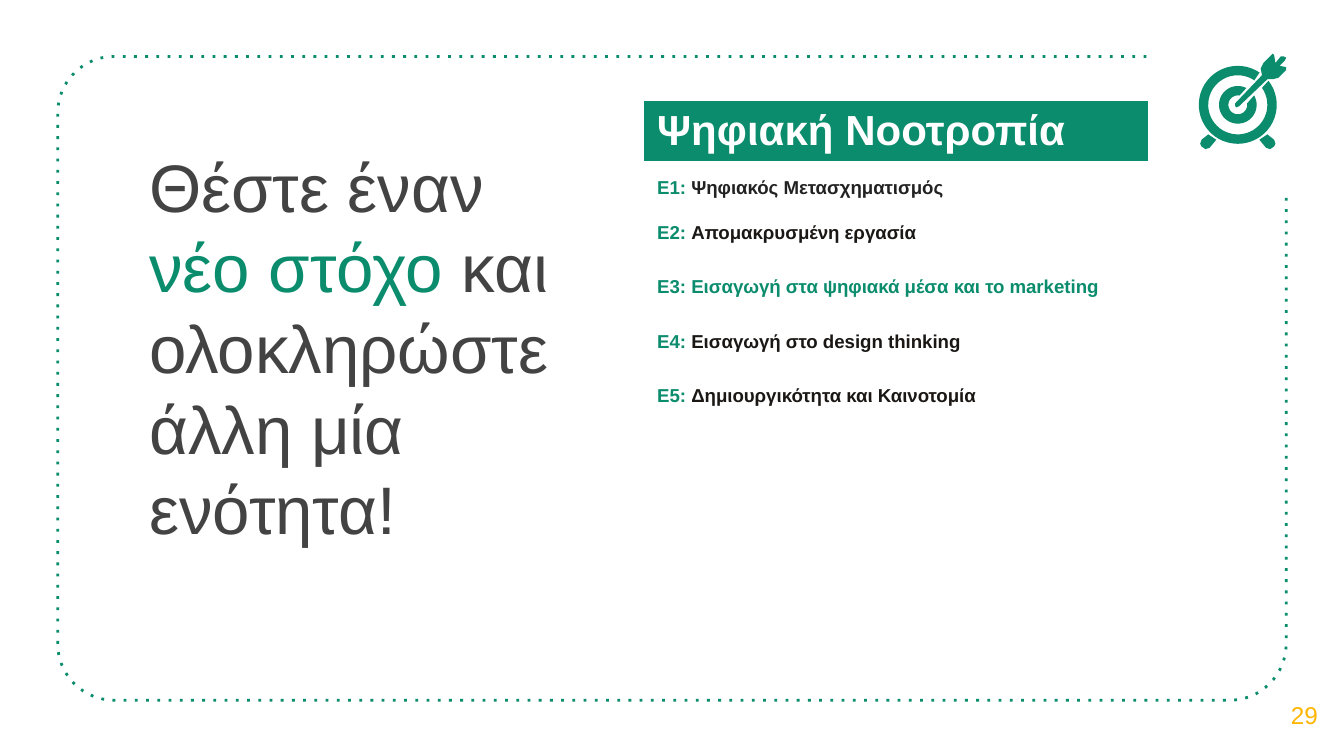
"""Build the goal-setting slide with its list of units and a target icon."""
import math

from pptx import Presentation
from pptx import util as u
from pptx.dml.color import RGBColor
from pptx.enum import dml, text
from pptx.oxml import ns

GREEN = RGBColor(0x0A, 0x8C, 0x6D)
GRAY = RGBColor(0x43, 0x43, 0x43)
INK = RGBColor(0x1A, 0x17, 0x14)
CHARCOAL = RGBColor(0x22, 0x22, 0x22)
AMBER = RGBColor(0xFF, 0xB6, 0x00)
WHITE = RGBColor(0xFF, 0xFF, 0xFF)
PLAIN_TABLE = "{2D5ABB26-0587-4C30-8999-92F81FD0307C}"

TITLE = [("Θέστε έναν ", GRAY), ("νέο στόχο ", GREEN),
         ("και ολοκληρώστε άλλη μία ενότητα!", GRAY)]
HEADING = "Ψηφιακή Νοοτροπία"
UNITS = [
    ("Ε1: ", "Ψηφιακός Μετασχηματισμός", CHARCOAL),
    ("Ε2: ", "Απομακρυσμένη εργασία", INK),
    ("Ε3: ", "Εισαγωγή στα ψηφιακά μέσα και το marketing", GREEN),
    ("Ε4: ", "Εισαγωγή στο design thinking", INK),
    ("Ε5: ", "Δημιουργικότητα και Καινοτομία", INK),
]
PAGE_NUMBER = "29"

LEFT, TOP, RIGHT, BOTTOM, RADIUS = 0.43, 0.42, 9.57, 5.21, 0.42
TARGET = (9.21, 0.78)
RINGS = [
    {"outer": (0.29, 56, 398), "inner": (0.22, 395, 56)},
    {"outer": (0.14, 63, 390), "inner": (0.07, 369, 80)},
]
FOOT = [(8.99, 1), (8.94, 1.04), (8.93, 1.07), (8.94, 1.09), (8.97, 1.11),
        (9, 1.1), (9.05, 1.04), (9.02, 1.02)]
ARROW = [(9.47, 0.4), (9.46, 0.41), (9.4, 0.47), (9.38, 0.51), (9.39, 0.56),
         (9.19, 0.77), (9.19, 0.79), (9.2, 0.8), (9.22, 0.79), (9.43, 0.59),
         (9.47, 0.59), (9.51, 0.58), (9.57, 0.52), (9.57, 0.5), (9.52, 0.49),
         (9.56, 0.45), (9.57, 0.43), (9.55, 0.42), (9.53, 0.42), (9.49, 0.47),
         (9.48, 0.41)]


def arc(center, radius, start, end, steps=48):
    angles = [math.radians(start + (end - start) * i / steps) for i in range(steps + 1)]
    return [(center[0] + radius * math.cos(a), center[1] - radius * math.sin(a))
            for a in angles]


def add_outline(parent, points, close=True):
    corners = [(u.Inches(x), u.Inches(y)) for x, y in points]
    builder = parent.build_freeform(*corners[0])
    builder.add_line_segments(corners[1:], close=close)
    shape = builder.convert_to_shape()
    shape.shadow.inherit = False
    return shape


def add_span(para, words, size, color, bold=False):
    span = para.add_run()
    span.text = words
    span.font.name = "Arial"
    span.font.size = u.Pt(size)
    span.font.bold = bold
    span.font.color.rgb = color


def place(box, left, top, width, height, anchor):
    box.left, box.top = u.Inches(left), u.Inches(top)
    box.width, box.height = u.Inches(width), u.Inches(height)
    frame = box.text_frame
    frame.word_wrap = True
    frame.auto_size = text.MSO_AUTO_SIZE.NONE
    frame.vertical_anchor = anchor
    frame.margin_left = frame.margin_right = u.Inches(0.1)
    frame.margin_top = frame.margin_bottom = u.Inches(0.1)
    return frame.paragraphs[0]


def add_border(page):
    points = [(8.53, TOP)]
    points += arc((LEFT + RADIUS, TOP + RADIUS), RADIUS, 90, 180, 16)
    points += arc((LEFT + RADIUS, BOTTOM - RADIUS), RADIUS, 180, 270, 16)
    points += arc((RIGHT - RADIUS, BOTTOM - RADIUS), RADIUS, 270, 360, 16)
    points.append((RIGHT, 1.46))
    border = add_outline(page.shapes, points, close=False)
    border.fill.background()
    border.line.color.rgb = GREEN
    border.line.width = u.Pt(1.5)
    border.line.dash_style = dml.MSO_LINE.ROUND_DOT
    border.element.spPr.find(".//" + ns.qn("a:prstDash")).set("val", "dot")


def add_target(page):
    icon = page.shapes.add_group_shape()
    outlines = [arc(TARGET, *ring["outer"]) + arc(TARGET, *ring["inner"]) for ring in RINGS]
    mirrored_foot = [(2 * TARGET[0] - x, y) for x, y in FOOT]
    for points in outlines + [FOOT, mirrored_foot, ARROW]:
        part = add_outline(icon.shapes, points)
        part.fill.solid()
        part.fill.fore_color.rgb = GREEN
        part.line.fill.background()


def add_units(page):
    holder = page.shapes.add_table(len(UNITS) + 1, 1, u.Inches(4.79), u.Inches(0.75),
                                   u.Inches(3.75), u.Inches(2.43))
    table = holder.table
    table.first_row = table.horz_banding = False
    holder.element.find(".//" + ns.qn("a:tableStyleId")).text = PLAIN_TABLE
    heading = table.cell(0, 0)
    heading.fill.solid()
    heading.fill.fore_color.rgb = GREEN
    add_span(heading.text_frame.paragraphs[0], HEADING, 22.5, WHITE, True)
    for row, (label, name, color) in enumerate(UNITS, 1):
        cell = table.cell(row, 0)
        cell.fill.background()
        para = cell.text_frame.paragraphs[0]
        add_span(para, label, 10, GREEN, True)
        add_span(para, name, 10, color, True)
    table.cell(1, 0).vertical_anchor = text.MSO_ANCHOR.MIDDLE


def main():
    deck = Presentation()
    deck.slide_width = u.Inches(10)
    deck.slide_height = deck.slide_width * 9 // 16
    page = deck.slides.add_slide(deck.slide_layouts[5])
    add_border(page)

    para = place(page.shapes.title, 1.01, 0.98, 3.2, 0.94, text.MSO_ANCHOR.TOP)
    para.alignment = text.PP_ALIGN.LEFT
    para.line_spacing = 1.0
    for words, color in TITLE:
        add_span(para, words, 36, color)

    number = page.shapes.add_textbox(0, 0, 0, 0)
    para = place(number, 9.41, 5.02, 0.59, 0.6, text.MSO_ANCHOR.MIDDLE)
    para.alignment = text.PP_ALIGN.CENTER
    add_span(para, PAGE_NUMBER, 13, AMBER)

    add_target(page)
    add_units(page)
    deck.save("out.pptx")


if __name__ == "__main__":
    main()
